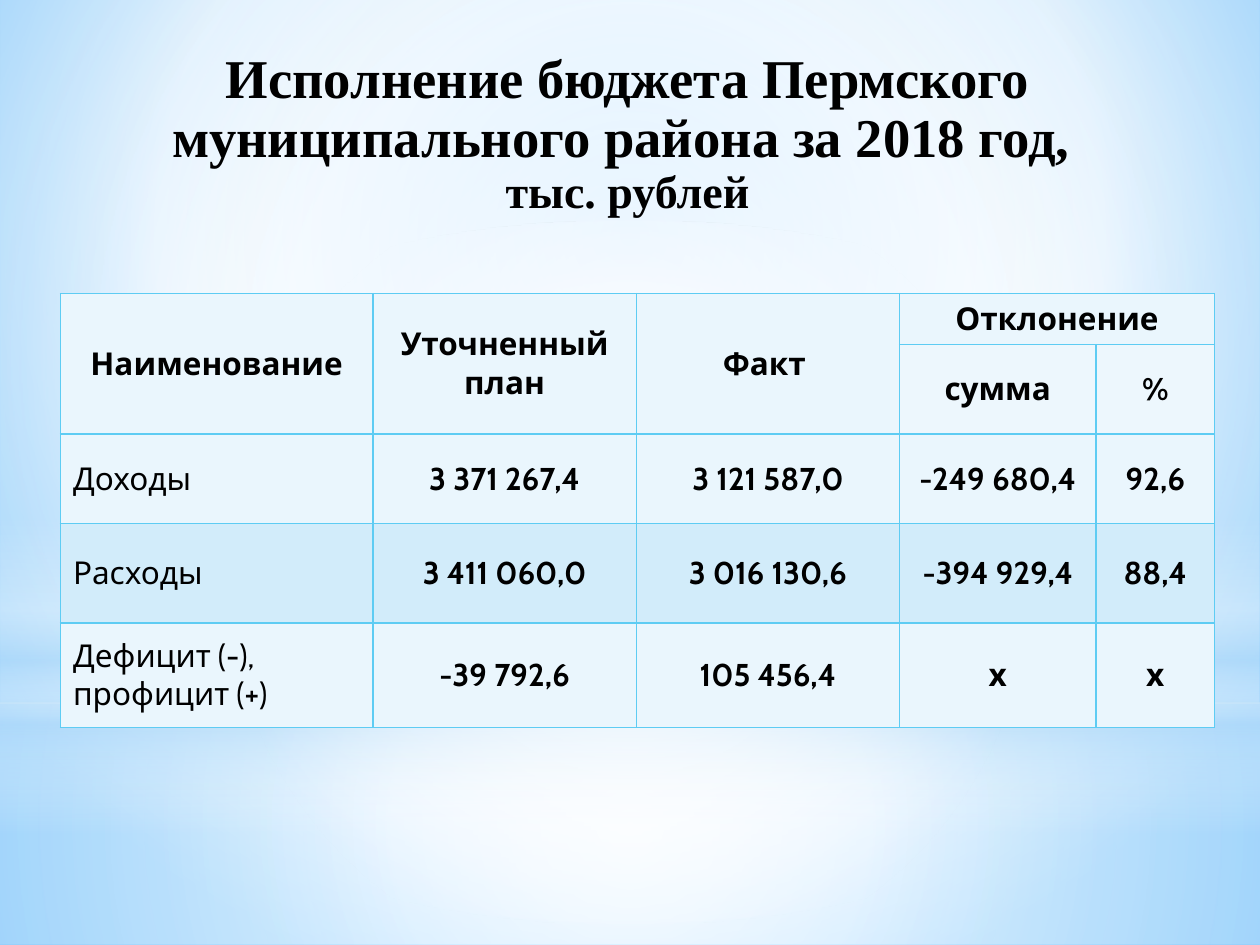
import pptx
import pptx.util
import pptx.oxml
import pptx.oxml.ns
import pptx.dml.color
import pptx.enum.shapes
import pptx.enum.text

Inches, Pt = pptx.util.Inches, pptx.util.Pt
RGB = pptx.dml.color.RGBColor
SHAPE = pptx.enum.shapes.MSO_SHAPE
ALIGN = pptx.enum.text.PP_ALIGN
MIDDLE = pptx.enum.text.MSO_ANCHOR.MIDDLE
NS = pptx.oxml.ns.nsdecls("a")

BLACK = RGB(0x00, 0x00, 0x00)
WHITE = RGB(0xFF, 0xFF, 0xFF)
SKY = RGB(0x9E, 0xD5, 0xFF)
BLUE = RGB(0x5B, 0xB9, 0xFF)
HAZE = RGB(0xB4, 0xDC, 0xFA)
LINE = RGB(0x5E, 0xCC, 0xF3)
PALE = RGB(0xEA, 0xF6, 0xFD)
PALER = RGB(0xED, 0xF7, 0xFD)
BAND = RGB(0xD2, 0xEC, 0xFA)
CENTER = (50, 50, 50, 50)


def shade(host, fill, stops, rect=None):
    """Fill with a gradient: circular towards rect, or top to bottom without it."""
    fill.solid()
    marks = "".join(
        f'<a:gs pos="{pos * 1000}"><a:srgbClr val="{color}">'
        f'<a:alpha val="{alpha * 1000}"/></a:srgbClr></a:gs>'
        for pos, color, alpha in stops)
    if rect:
        sides = " ".join(f'{side}="{num * 1000}"' for side, num in zip("ltrb", rect))
        way = f'<a:path path="circle"><a:fillToRect {sides}/></a:path>'
    else:
        way = '<a:lin ang="5400000" scaled="0"/>'
    old = host.element.xpath(".//a:solidFill")[0]
    old.getparent().replace(old, pptx.oxml.parse_xml(
        f'<a:gradFill {NS} rotWithShape="1"><a:gsLst>{marks}</a:gsLst>{way}</a:gradFill>'))


def write(par, text, font, size, bold=True):
    run = par.add_run()
    run.text = text
    run.font.name = font
    run.font.size = Pt(size)
    run.font.bold = bold
    run.font.color.rgb = BLACK


prs = pptx.Presentation()
prs.slide_width, prs.slide_height = Inches(10), Inches(7.5)
slide = prs.slides.add_slide(prs.slide_layouts[5])

# Background and the soft light layers over it
shade(slide, slide.background.fill,
      [(0, SKY, 100), (60, WHITE, 100), (100, BLUE, 100)], (20, 10, 20, 60))
layers = [
    (SHAPE.RECTANGLE, 5.58, 1.92,
     [(0, WHITE, 91), (37, WHITE, 76), (100, HAZE, 79)], CENTER),
    (SHAPE.RECTANGLE, 0, 5.58,
     [(0, WHITE, 89), (48, WHITE, 62), (100, HAZE, 79)], CENTER),
    (SHAPE.RECTANGLE, 4.12, 2.5,
     [(0, WHITE, 0), (29, WHITE, 30), (45, HAZE, 40), (55, WHITE, 26),
      (65, HAZE, 60), (100, WHITE, 0)], None),
    (SHAPE.OVAL, 1.75, 5.58, [(0, WHITE, 100), (56, WHITE, 0)], CENTER),
]
for kind, top, height, stops, rect in layers:
    layer = slide.shapes.add_shape(kind, 0, Inches(top), Inches(10), Inches(height))
    layer.shadow.inherit = False
    layer.line.fill.background()
    shade(layer, layer.fill, stops, rect)

# Table
rows = [
    ["Наименование", "Уточненный план", "Факт ", "Отклонение", ""],
    ["", "", "", "сумма", "%"],
    ["Доходы", "3 371 267,4", "3 121 587,0", "-249 680,4", "92,6"],
    ["Расходы", "3 411 060,0", "3 016 130,6", "-394 929,4", "88,4"],
    ["Дефицит (-), профицит (+)", "-39 792,6", "105 456,4", "х", "х"],
]
widths = [2.48, 2.09, 2.09, 1.56, 0.94]
heights = [0.4, 0.71, 0.71, 0.79, 0.83]
fills = [PALE, PALER, PALE, BAND, PALE]
table = slide.shapes.add_table(5, 5, Inches(0.48), Inches(2.33),
                               Inches(sum(widths)), Inches(sum(heights))).table
for col, width in zip(table.columns, widths):
    col.width = Inches(width)
for row, height in zip(table.rows, heights):
    row.height = Inches(height)
for col in range(3):
    table.cell(0, col).merge(table.cell(1, col))
table.cell(0, 3).merge(table.cell(0, 4))

for r, texts in enumerate(rows):
    for c, text in enumerate(texts):
        cell = table.cell(r, c)
        cell.fill.solid()
        cell.fill.fore_color.rgb = fills[r]
        cell.vertical_anchor = MIDDLE
        props = cell._tc.get_or_add_tcPr()
        for i, side in enumerate("LRTB"):
            props.insert(i, pptx.oxml.parse_xml(
                f'<a:ln{side} {NS} w="12700"><a:solidFill><a:srgbClr val="{LINE}"/>'
                f'</a:solidFill></a:ln{side}>'))
        if text:
            label = r > 1 and c == 0
            par = cell.text_frame.paragraphs[0]
            par.alignment = ALIGN.LEFT if label else ALIGN.CENTER
            write(par, text, "Cabin", 18, not label)

# Title, brought in front of the light layers
title = slide.shapes.title
slide.shapes.element.append(title.element)
title.left, title.top = Inches(0.48), Inches(0.33)
title.width, title.height = Inches(9), Inches(1.48)
frame = title.text_frame
frame.word_wrap = True
frame.auto_size = pptx.enum.text.MSO_AUTO_SIZE.NONE
frame.vertical_anchor = MIDDLE
lines = [(" Исполнение бюджета Пермского ", 31.2),
         ("муниципального района за 2018 год, ", 31.2),
         ("тыс. рублей", 26.3)]
for i, (text, size) in enumerate(lines):
    par = frame.add_paragraph() if i else frame.paragraphs[0]
    par.alignment = ALIGN.CENTER
    par.line_spacing = 0.9
    par.space_before = Pt(0)
    write(par, text, "Times New Roman", size)

prs.save("out.pptx")
